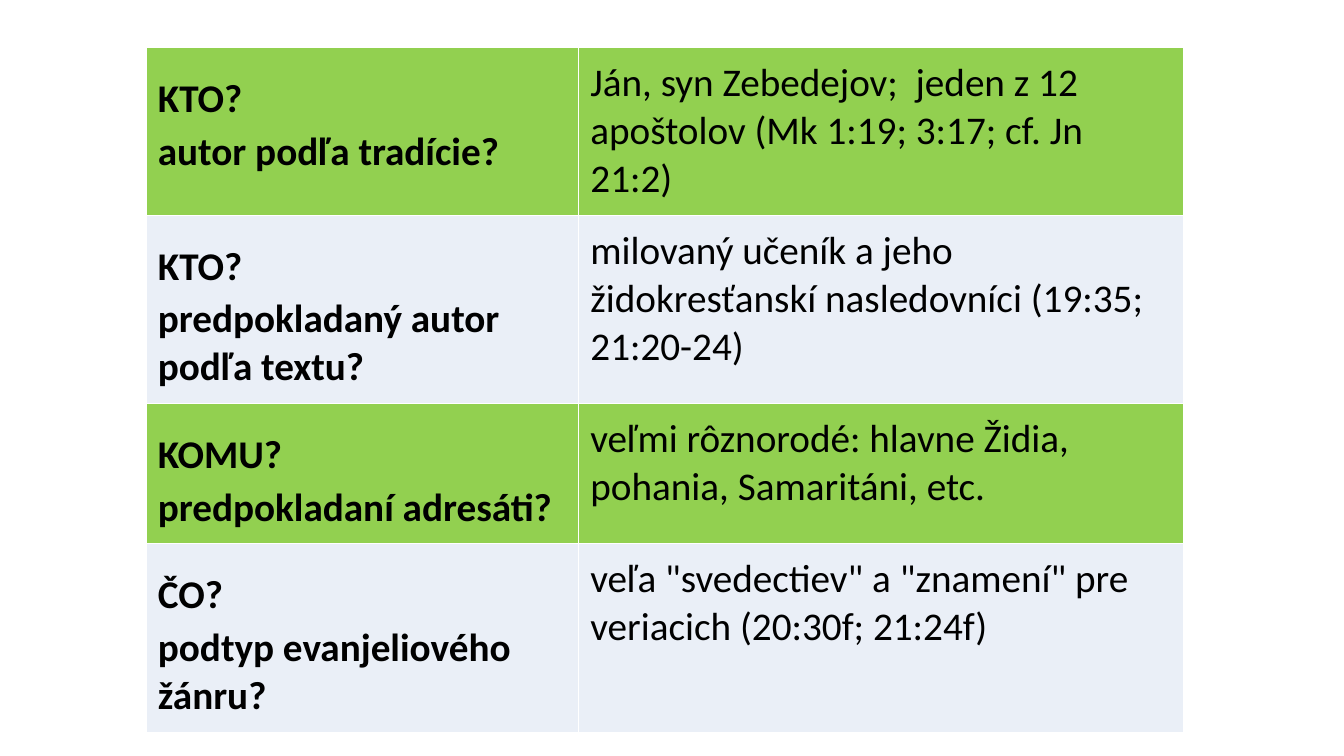
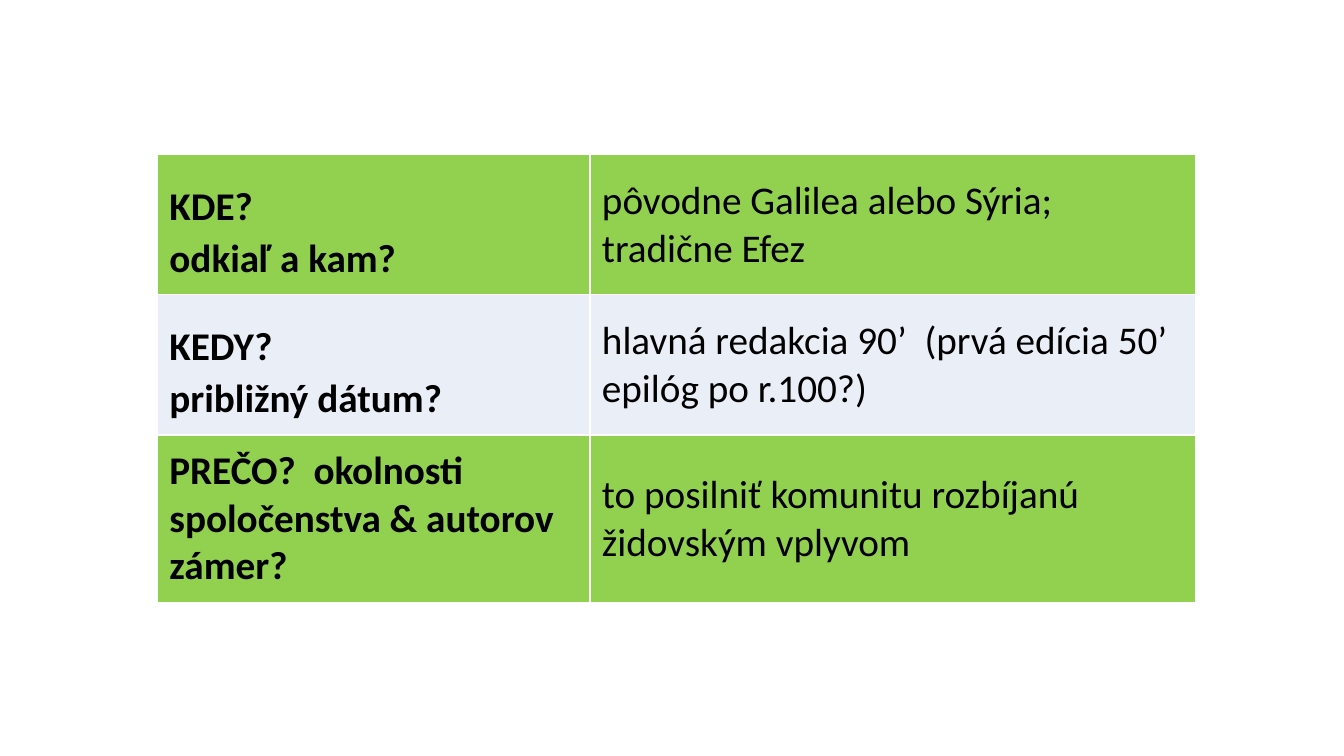
from dataclasses import dataclass
from lxml.etree import SubElement
from pptx import Presentation
from pptx.dml.color import RGBColor
from pptx.enum.text import MSO_ANCHOR
from pptx.oxml.ns import qn
from pptx.util import Cm, Pt


@dataclass(frozen=True)
class Theme:
    font: str = "Calibri"
    text: str = "000000"
    bands: tuple = ("92D050", "EAEFF7")
    rule: str = "FFFFFF"
    size: int = 28
    gap: int = 40
    inset: float = 0.3
    cols: tuple = (10.9, 15.26)


THEME = Theme()

AUTHOR = [
    (4.2, ("KTO?", "autor podľa tradície?"),
     "Ján, syn Zebedejov;  jeden z 12 apoštolov (Mk 1:19; 3:17; cf. Jn 21:2)"),
    (4.75, ("KTO?", "predpokladaný autor podľa textu?"),
     "milovaný učeník a jeho židokresťanskí nasledovníci (19:35; 21:20-24)"),
    (3.53, ("KOMU?", "predpokladaní adresáti?"),
     "veľmi rôznorodé: hlavne Židia, pohania, Samaritáni, etc."),
    (4.75, ("ČO?", "podtyp evanjeliového žánru?"),
     'veľa "svedectiev" a "znamení" pre veriacich (20:30f; 21:24f)'),
]

ORIGIN = [
    (3.53, ("KDE?", "odkiaľ a kam?"),
     "pôvodne Galilea alebo Sýria; tradične Efez"),
    (3.53, ("KEDY?", "približný dátum?"),
     "hlavná redakcia 90’  (prvá edícia 50’  epilóg po r.100?)"),
    (4.2, ("PREČO?  okolnosti spoločenstva & autorov zámer?",),
     "to posilniť komunitu rozbíjanú židovským vplyvom"),
]


def add_rules(cell):
    props = cell._tc.get_or_add_tcPr()
    for place, side in enumerate(("lnL", "lnR", "lnT", "lnB")):
        line = SubElement(props, qn(f"a:{side}"), w=str(Pt(1)))
        fill = SubElement(line, qn("a:solidFill"))
        SubElement(fill, qn("a:srgbClr"), val=THEME.rule)
        props.insert(place, line)


def fill_cell(cell, lines, color, anchor, bold):
    cell.fill.solid()
    cell.fill.fore_color.rgb = RGBColor.from_string(color)
    cell.vertical_anchor = anchor
    inset = Cm(THEME.inset)
    cell.margin_left = cell.margin_right = inset
    cell.margin_top = cell.margin_bottom = inset
    add_rules(cell)
    para = cell.text_frame.paragraphs[0]
    font = para.font
    font.name = THEME.font
    font.size = Pt(THEME.size)
    font.bold = bold
    font.color.rgb = RGBColor.from_string(THEME.text)
    for index, line in enumerate(lines):
        if index:
            space = para.add_run()
            space.text = " "
            space.font.size = Pt(THEME.gap)
            para.add_line_break()
        para.add_run().text = line


def add_grid(deck, rows, left, top, anchor):
    slide = deck.slides.add_slide(deck.slide_layouts[6])
    high = sum(row[0] for row in rows)
    frame = slide.shapes.add_table(
        len(rows), len(THEME.cols), Cm(left), Cm(top),
        Cm(sum(THEME.cols)), Cm(high))
    table = frame.table
    table.first_row = table.horz_banding = False
    for col, width in zip(table.columns, THEME.cols):
        col.width = Cm(width)
    for index, (height, label, answer) in enumerate(rows):
        table.rows[index].height = Cm(height)
        color = THEME.bands[index % len(THEME.bands)]
        fill_cell(table.cell(index, 0), label, color, anchor, True)
        fill_cell(table.cell(index, 1), (answer,), color, anchor, False)


def main():
    deck = Presentation()
    deck.slide_width = Cm(33.87)
    deck.slide_height = Cm(19.05)
    add_grid(deck, AUTHOR, 3.68, 1.2, MSO_ANCHOR.TOP)
    add_grid(deck, ORIGIN, 3.97, 3.9, MSO_ANCHOR.MIDDLE)
    deck.save("out.pptx")


if __name__ == "__main__":
    main()
